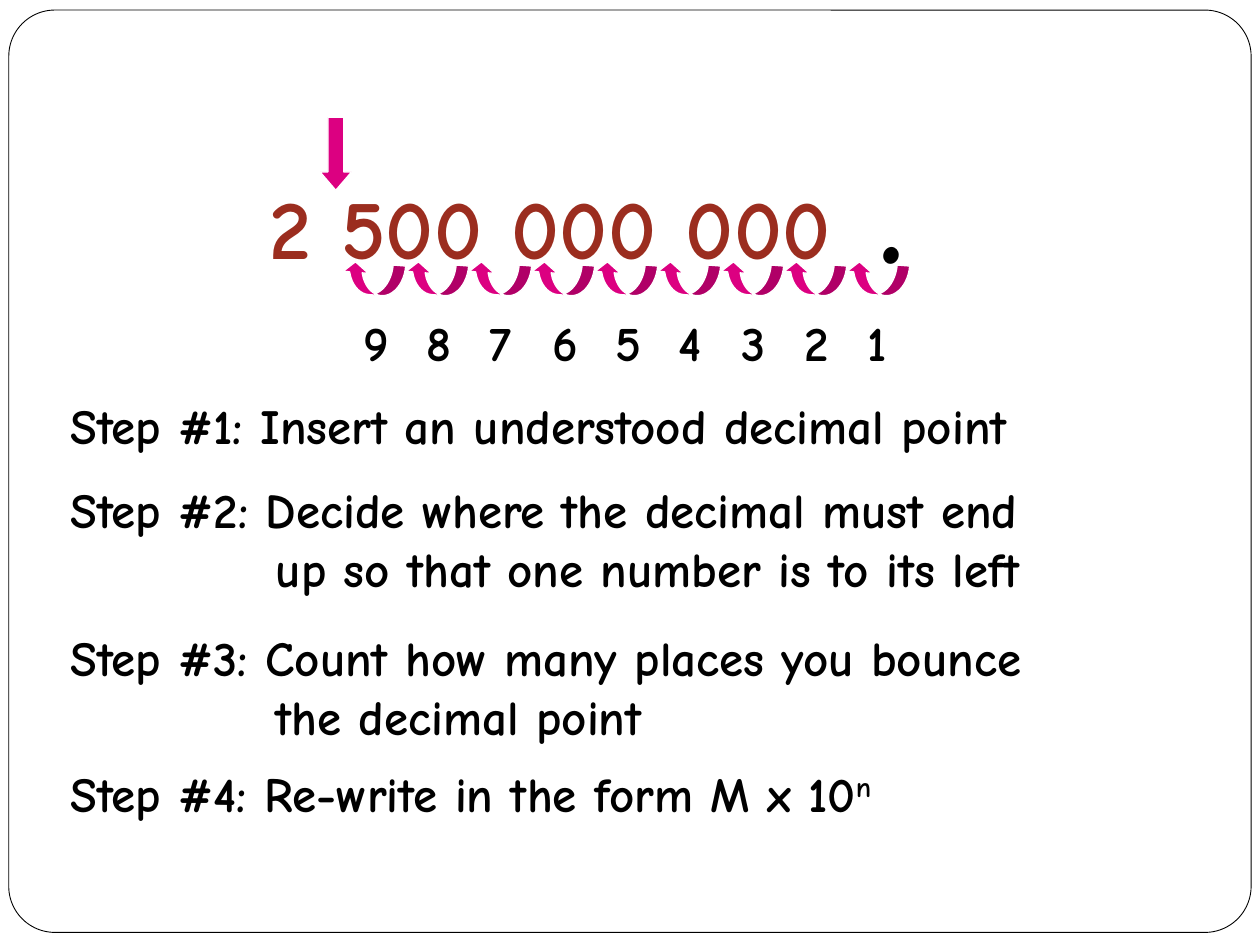
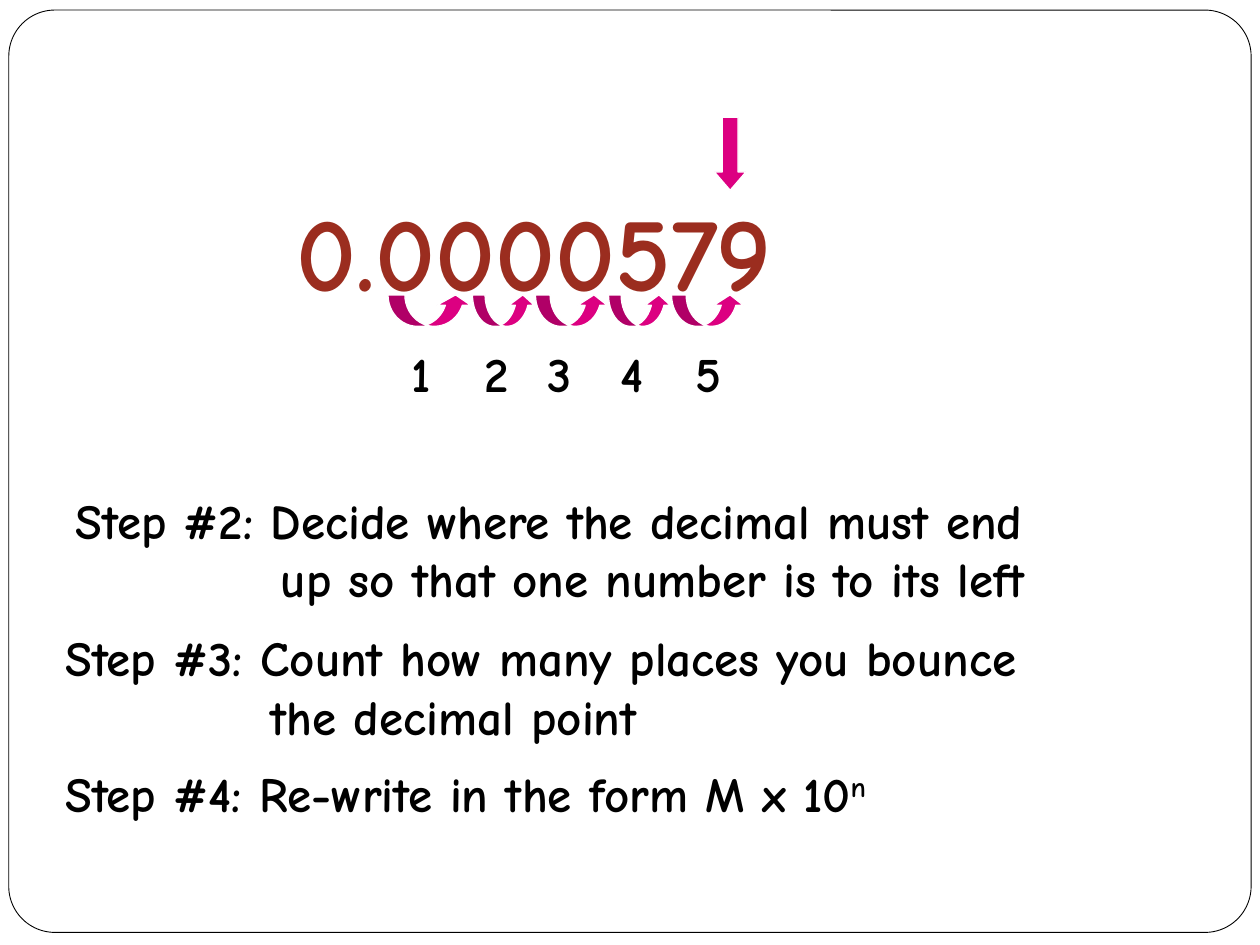
from dataclasses import dataclass

from pptx import Presentation
from pptx.dml.color import RGBColor
from pptx.enum.shapes import MSO_SHAPE
from pptx.enum.text import MSO_ANCHOR, MSO_AUTO_SIZE, PP_ALIGN
from pptx.oxml.ns import qn
from pptx.util import Pt

PX = 9144  # EMU per px, 100 px to the inch


@dataclass(frozen=True)
class Theme:
    font: str = "Comic Neue"
    ink: RGBColor = RGBColor(0x00, 0x00, 0x00)
    paper: RGBColor = RGBColor(0xFF, 0xFF, 0xFF)
    number: RGBColor = RGBColor(0x9B, 0x2D, 0x1F)
    arrow: RGBColor = RGBColor(0xDC, 0x00, 0x81)
    step_size: int = 28
    large_number_size: int = 48
    small_number_size: int = 60
    point_size: int = 80


theme = Theme()


def write(slide, text, left, top, width, height, *, size=theme.step_size, color=theme.ink,
          wrap=True, indent=0, superscript="", box=None):
    """Write bold text; lines after the first are indented."""
    area = [length * PX for length in (left, top, width, height)]
    if box is None:
        box = slide.shapes.add_textbox(*area)
    else:
        box.left, box.top, box.width, box.height = area
    frame = box.text_frame
    frame.word_wrap = wrap
    frame.auto_size = MSO_AUTO_SIZE.SHAPE_TO_FIT_TEXT
    frame.vertical_anchor = MSO_ANCHOR.TOP
    frame.text = text
    if superscript:
        frame.paragraphs[-1].add_run().text = superscript
    for index, paragraph in enumerate(frame.paragraphs):
        paragraph.alignment = PP_ALIGN.LEFT
        if index:
            properties = box.element.findall(".//" + qn("a:pPr"))[-1]
            properties.set("marL", str(indent * PX))
        for run in paragraph.runs:
            run.font.name = theme.font
            run.font.size = Pt(size)
            run.font.bold = True
            run.font.color.rgb = color
    if superscript:
        box.element.findall(".//" + qn("a:rPr"))[-1].set("baseline", "30000")


def draw(slide, kind, left, top, width, height, adjustments, *, fill=theme.arrow,
         line=theme.paper, line_width=0.75, rotation=0):
    shape = slide.shapes.add_shape(kind, *[length * PX for length in (left, top, width, height)])
    for index, value in enumerate(adjustments):
        shape.adjustments[index] = value
    shape.shadow.inherit = False
    shape.fill.solid()
    shape.fill.fore_color.rgb = fill
    shape.line.color.rgb = line
    shape.line.width = Pt(line_width)
    shape.rotation = rotation
    return shape


presentation = Presentation()
presentation.slide_width, presentation.slide_height = 1000 * PX, 750 * PX
layout = presentation.slide_layouts.get_by_name("Title Only")
large_slide = presentation.slides.add_slide(layout)
small_slide = presentation.slides.add_slide(layout)

# Shared rounded frame, moved behind everything on the layout
page_frame = draw(large_slide, MSO_SHAPE.ROUNDED_RECTANGLE, 7, 8, 986, 732, [0.05],
                  fill=theme.paper, line=theme.ink, line_width=0.5)
page_frame.element.nvSpPr.cNvPr.set("id", "99")
layout.shapes.element.insert(2, page_frame.element)

# Headline numbers and the arrow at the new decimal place
write(large_slide, "2 500 000 000", 204, 134, 602, 90, size=theme.large_number_size,
      color=theme.number, box=large_slide.shapes.title)
write(small_slide, "0.0000579", 225, 143, 517, 110, size=theme.small_number_size,
      color=theme.number, box=small_slide.shapes.title)
for slide, left in ((large_slide, 254), (small_slide, 567)):
    draw(slide, MSO_SHAPE.DOWN_ARROW, left, 93, 25, 58, [0.5, 0.58])

# Large number: the understood point and nine bounces to the left
write(large_slide, ".", 688, 93, 67, 143, size=theme.point_size)
for bounce in range(1, 10):
    left = 721 - 50 * bounce
    draw(large_slide, MSO_SHAPE.CURVED_DOWN_ARROW, left, 209, 50, 25,
         [0.4, 0.8, 0.33], rotation=184.8)
    write(large_slide, str(bounce), left + 8, 243, 42, 57)

# Small number: five bounces to the right, each as wide as its digit
arrow_left = 308
bounces = ((67, 317), (50, 375), (58, 425), (50, 483), (58, 542))
for bounce, (width, label_left) in enumerate(bounces, start=1):
    draw(small_slide, MSO_SHAPE.CURVED_UP_ARROW, arrow_left, 234, width, 25,
         [0.2 * width / 25, 0.4 * width / 25, 0.33])
    write(small_slide, str(bounce), label_left, 268, 44, 57, wrap=False)
    arrow_left += width

# Steps
write(large_slide, "Step #1: Insert an understood decimal point", 46, 309, 877, 57, wrap=False)
for slide, left, decide_left, decide_top in ((large_slide, 46, 46, 376),
                                             (small_slide, 42, 50, 384)):
    write(slide, "Step #2: Decide where the decimal must end\nup so that one number is to its left",
          decide_left, decide_top, 908, 103, indent=163)
    write(slide, "Step #3: Count how many places you bounce\nthe decimal point",
          left, 493, 908, 103, indent=163)
    write(slide, "Step #4: Re-write in the form M x 10", left, 601, 908, 57, superscript="n")

presentation.save("out.pptx")
